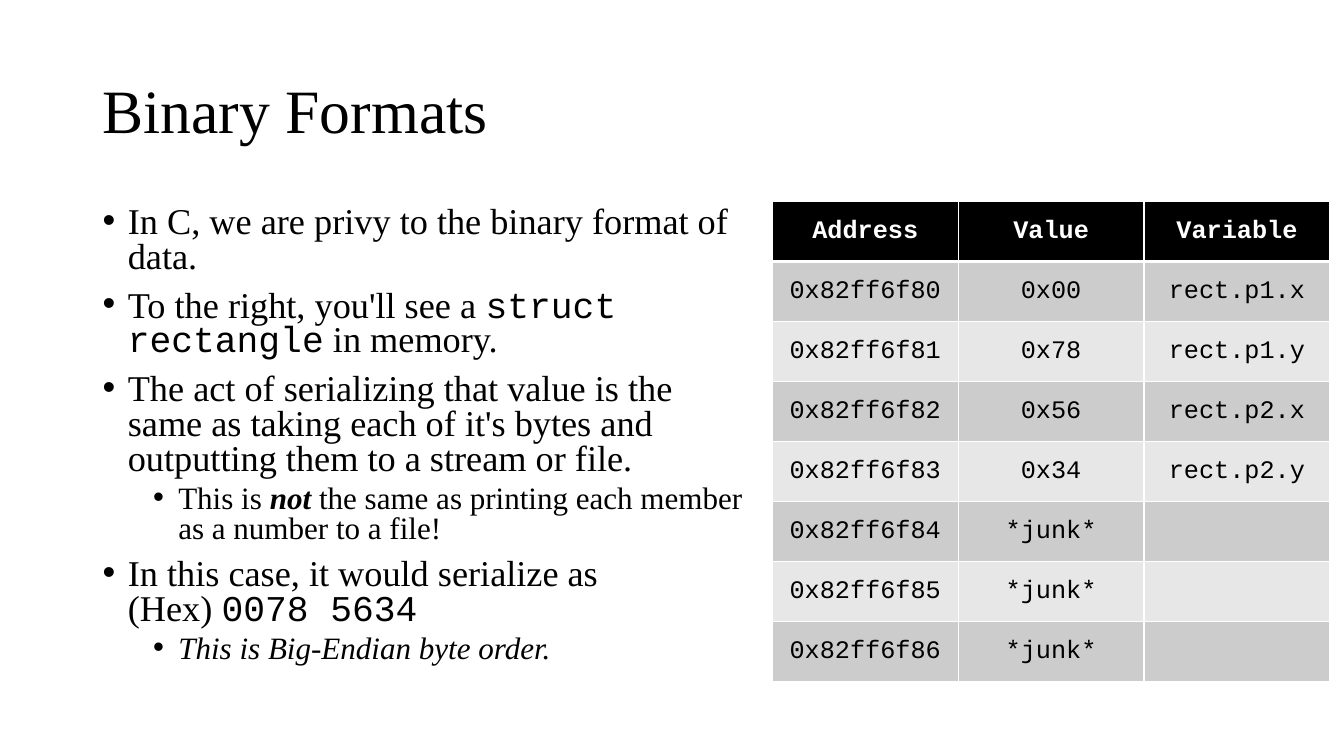
from lxml import etree
from pptx import Presentation
from pptx import util as u
from pptx.dml.color import RGBColor
from pptx.enum import text
from pptx.oxml import ns

SERIF = "Times New Roman"
MONO = "Courier New"
BLACK = "000000"
WHITE = "FFFFFF"
BODY_SIZES = [25.9, 22.2]
BODY_INDENTS = [0.25, 0.75]
BODY_SPACING = [10, 5]

POINTS = [
    (0, [("In C, we are privy to the binary format of data.", "plain")]),
    (0, [("To the right, you'll see a ", "plain"),
         ("struct rectangle", "code"),
         (" in memory.", "plain")]),
    (0, [("The act of serializing that value is the same as taking each of "
          "it's bytes and outputting them to a stream or file.", "plain")]),
    (1, [("This is ", "plain"),
         ("not", "strong"),
         (" the same as printing each member as a number to a file!", "plain")]),
    (0, [("In this case, it would serialize as", "plain"),
         ("\n", "break"),
         ("(Hex) ", "plain"),
         ("0078 5634", "code")]),
    (1, [("This is Big-Endian byte order.", "emphasis")]),
]

HEADINGS = ["Address", "Value", "Variable"]
VALUES = ["0x00", "0x78", "0x56", "0x34"] + ["*junk*"] * 3
VARIABLES = ["rect.p1.x", "rect.p1.y", "rect.p2.x", "rect.p2.y"] + [""] * 3


def rgb(color):
    return RGBColor.from_string(color)


def style_run(run, size, font=SERIF, color=BLACK, bold=False, italic=False):
    run.font.size = u.Pt(size)
    run.font.name = font
    run.font.color.rgb = rgb(color)
    run.font.bold = bold
    run.font.italic = italic


def add_frame(slide, left, top, width, height, anchor):
    box = slide.shapes.add_textbox(
        u.Inches(left), u.Inches(top), u.Inches(width), u.Inches(height))
    frame = box.text_frame
    frame.word_wrap = True
    frame.vertical_anchor = anchor
    return frame


def add_title(slide, title):
    frame = add_frame(slide, 0.92, 0.4, 11.5, 1.45, text.MSO_ANCHOR.MIDDLE)
    frame.text = title
    heading = frame.paragraphs[0]
    heading.line_spacing = 0.9
    style_run(heading.runs[0], 44)


def set_bullet(paragraph, indent):
    properties = paragraph._p.get_or_add_pPr()
    properties.set("marL", str(u.Inches(indent)))
    properties.set("indent", str(u.Inches(-0.25)))
    etree.SubElement(properties, ns.qn("a:buFont"), typeface="Arial")
    etree.SubElement(properties, ns.qn("a:buChar"), char="•")


def add_points(slide, points):
    frame = add_frame(slide, 0.92, 2, 6.63, 4.76, text.MSO_ANCHOR.TOP)
    for index, (level, pieces) in enumerate(points):
        point = frame.add_paragraph() if index else frame.paragraphs[0]
        point.level = level
        point.line_spacing = 0.8
        point.space_before = u.Pt(BODY_SPACING[level])
        set_bullet(point, BODY_INDENTS[level])
        for wording, style in pieces:
            if style == "break":
                point.add_line_break()
                continue
            run = point.add_run()
            run.text = wording
            style_run(run, BODY_SIZES[level],
                      font=MONO if style == "code" else SERIF,
                      bold=style == "strong",
                      italic=style in ("strong", "emphasis"))


def set_borders(cell, top, bottom):
    properties = cell._tc.get_or_add_tcPr()
    for side, width in (("L", 1), ("R", 1), ("T", top), ("B", bottom)):
        line = etree.SubElement(
            properties, ns.qn(f"a:ln{side}"), w=str(u.Pt(width)))
        fill = etree.SubElement(line, ns.qn("a:solidFill"))
        etree.SubElement(fill, ns.qn("a:srgbClr"), val=WHITE)


def fill_cell(cell, wording, row):
    header = row == 0
    set_borders(cell, top=3 if row == 1 else 1, bottom=3 if header else 1)
    cell.fill.solid()
    band = "CCCCCC" if row % 2 else "E7E7E7"
    cell.fill.fore_color.rgb = rgb(BLACK if header else band)
    cell.vertical_anchor = text.MSO_ANCHOR.MIDDLE
    cell.text = wording
    entry = cell.text_frame.paragraphs[0]
    entry.alignment = text.PP_ALIGN.CENTER
    for run in entry.runs:
        style_run(run, 18, MONO, WHITE if header else BLACK, bold=header)


def add_memory_table(slide, rows):
    memory = slide.shapes.add_table(
        len(rows), len(HEADINGS), u.Inches(7.66), u.Inches(2),
        u.Inches(5.53), u.Inches(4.76)).table
    for row, entries in enumerate(rows):
        for column, wording in enumerate(entries):
            fill_cell(memory.cell(row, column), wording, row)


def main():
    deck = Presentation()
    deck.slide_width = u.Inches(13.33)
    deck.slide_height = u.Inches(7.5)
    slide = deck.slides.add_slide(deck.slide_layouts[6])
    addresses = [f"0x82ff6f{offset:x}" for offset in range(0x80, 0x87)]
    add_title(slide, "Binary Formats")
    add_points(slide, POINTS)
    add_memory_table(slide, [HEADINGS, *zip(addresses, VALUES, VARIABLES)])
    deck.save("out.pptx")


if __name__ == "__main__":
    main()
